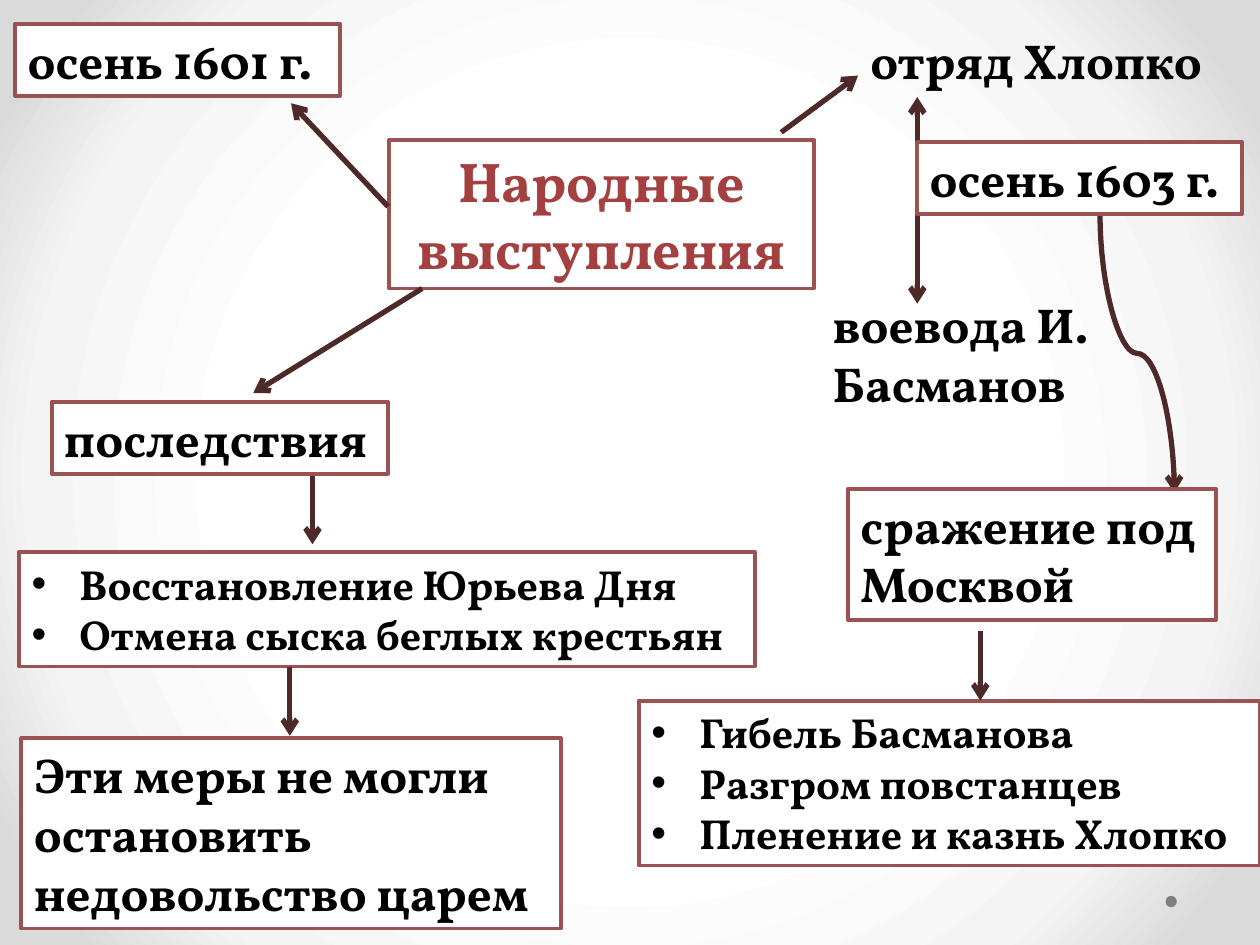
from pptx import Presentation
from pptx.dml.color import RGBColor
from pptx.enum.shapes import MSO_CONNECTOR, MSO_SHAPE
from pptx.enum.text import MSO_ANCHOR, MSO_AUTO_SIZE, PP_ALIGN
from pptx.oxml import parse_xml
from pptx.oxml.ns import nsdecls, qn
from pptx.util import Inches, Pt

STRAIGHT, CURVE = MSO_CONNECTOR.STRAIGHT, MSO_CONNECTOR.CURVE
RECTANGLE, OVAL = MSO_SHAPE.RECTANGLE, MSO_SHAPE.OVAL
TOP, LEFT, CENTER = MSO_ANCHOR.TOP, PP_ALIGN.LEFT, PP_ALIGN.CENTER
NO_AUTOSIZE = MSO_AUTO_SIZE.NONE

FONT = "Vollkorn"
BLACK, WHITE, RED = "000000", "FFFFFF", "A54040"
BORDER, ARROW, DOT = "9C5252", "4E2929", "808080"
BACKGROUND_STOPS = [(50, "FFFFFF"), (76, "F4F4F4"), (92, "DADADA")]
TWO_CONTENT_LAYOUT = 3
LIST_INDENT = Inches(0.38)


def rgb(hex_color):
    return RGBColor.from_string(hex_color)


def set_background(slide):
    """Radial gradient that spreads from the centre of the slide."""
    stops = "".join(
        f'<a:gs pos="{pos * 1000}"><a:srgbClr val="{color}"/></a:gs>'
        for pos, color in BACKGROUND_STOPS)
    background = parse_xml(
        f'<p:bg {nsdecls("p", "a")}><p:bgPr><a:gradFill rotWithShape="1">'
        f'<a:gsLst>{stops}</a:gsLst><a:path path="circle">'
        '<a:fillToRect l="50000" t="50000" r="50000" b="50000"/></a:path>'
        '</a:gradFill><a:effectLst/></p:bgPr></p:bg>')
    slide.shapes._spTree.addprevious(background)


def write_text(shape, text, size=28, color=BLACK, align=LEFT, bullets=False):
    """Each line of the text becomes one paragraph."""
    frame = shape.text_frame
    frame.text = text
    frame.word_wrap = True
    frame.auto_size = NO_AUTOSIZE
    frame.vertical_anchor = TOP
    for paragraph in frame.paragraphs:
        paragraph.alignment = align
        paragraph.space_before = Pt(0)
        font = paragraph.runs[0].font
        font.name, font.size, font.bold = FONT, Pt(size), True
        font.color.rgb = rgb(color)
        if bullets:
            properties = paragraph._p.get_or_add_pPr()
            properties.set("marL", str(LIST_INDENT))
            properties.set("indent", str(-LIST_INDENT))
            properties.append(parse_xml(
                f'<a:buFont {nsdecls("a")} typeface="Arial"/>'))
            properties.append(parse_xml(
                f'<a:buChar {nsdecls("a")} char="•"/>'))


def frame_shape(shape):
    shape.fill.solid()
    shape.fill.fore_color.rgb = rgb(WHITE)
    shape.line.color.rgb = rgb(BORDER)
    shape.line.width = Pt(2.25)


def fill_placeholder(placeholder, box, text, **text_format):
    placeholder.left, placeholder.top, placeholder.width, placeholder.height = (
        Inches(v) for v in box)
    frame_shape(placeholder)
    write_text(placeholder, text, **text_format)


def add_framed_box(slide, box, text):
    shape = slide.shapes.add_shape(RECTANGLE, *(Inches(v) for v in box))
    shape.shadow.inherit = False
    frame_shape(shape)
    write_text(shape, text)


def add_label(slide, box, text):
    write_text(slide.shapes.add_textbox(*(Inches(v) for v in box)), text)


def add_arrow(slide, start, end, kind=STRAIGHT, both_ends=False):
    arrow = slide.shapes.add_connector(
        kind, *(Inches(v) for v in (*start, *end)))
    arrow.line.color.rgb = rgb(ARROW)
    arrow.line.width = Pt(3)
    line = arrow.line._get_or_add_ln()
    for end_tag in (["headEnd"] if both_ends else []) + ["tailEnd"]:
        line.append(parse_xml(
            f'<a:{end_tag} {nsdecls("a")} type="arrow"/>'))
    arrow._element.spPr.append(parse_xml(f'<a:effectLst {nsdecls("a")}/>'))
    return arrow


def add_falling_curve(slide, start, end):
    """Curve that leaves and arrives vertically: a sideways one, turned."""
    (x1, y1), (x2, y2) = start, end
    center_x, center_y = (x1 + x2) / 2, (y1 + y2) / 2
    half_length, half_shift = (y2 - y1) / 2, (x2 - x1) / 2
    curve = add_arrow(slide,
                      (center_x + half_length, center_y - half_shift),
                      (center_x - half_length, center_y + half_shift), CURVE)
    curve._element.spPr.find(qn("a:xfrm")).set("rot", str(270 * 60000))


def add_dot(slide, box):
    dot = slide.shapes.add_shape(OVAL, *(Inches(v) for v in box))
    dot.shadow.inherit = False
    dot.fill.solid()
    dot.fill.fore_color.rgb = rgb(DOT)
    dot.line.fill.background()


def main():
    presentation = Presentation()
    presentation.slide_width, presentation.slide_height = Inches(10), Inches(7.5)
    slide = presentation.slides.add_slide(
        presentation.slide_layouts[TWO_CONTENT_LAYOUT])
    set_background(slide)
    add_dot(slide, (9.25, 7.11, 0.09, 0.09))

    # Title and the two lists
    title, reforms, outcome = slide.placeholders
    fill_placeholder(title, (3.09, 1.11, 3.37, 1.18), "Народные выступления",
                     size=32, color=RED, align=CENTER)
    fill_placeholder(reforms, (0.15, 4.38, 5.84, 0.91),
                     "Восстановление Юрьева Дня\nОтмена сыска беглых крестьян",
                     size=24, bullets=True)
    fill_placeholder(outcome, (5.07, 5.56, 4.93, 1.31),
                     "Гибель Басманова\nРазгром повстанцев\n"
                     "Пленение и казнь Хлопко", size=24, bullets=True)

    # Arrows, below the boxes they touch
    for start, end in [((3.08, 1.64), (2.31, 0.82)),
                       ((6.2, 1.05), (6.81, 0.6)),
                       ((3.35, 2.29), (2.01, 3.12))]:
        add_arrow(slide, start, end)
    for x, y in [(2.48, 3.77), (2.3, 5.29), (7.78, 5.01)]:
        add_arrow(slide, (x, y), (x, y + 0.55))
    add_arrow(slide, (7.28, 0.77), (7.28, 2.41), both_ends=True)
    add_falling_curve(slide, (8.73, 1.7), (9.32, 3.91))

    # Events and people
    for box, text in [
            ((0.12, 0.19, 2.58, 0.57), "осень 1601 г."),
            ((7.28, 1.13, 2.58, 0.57), "осень 1603 г."),
            ((0.41, 3.19, 2.67, 0.57), "последствия"),
            ((6.73, 3.88, 2.92, 1.04), "сражение под Москвой"),
            ((0.17, 5.86, 4.28, 1.51),
             "Эти меры не могли остановить недовольство царем")]:
        add_framed_box(slide, box, text)
    add_label(slide, (6.81, 0.19, 2.94, 0.57), "отряд Хлопко")
    add_label(slide, (6.51, 2.29, 2.54, 1.04), "воевода И. Басманов")

    presentation.save("out.pptx")


if __name__ == "__main__":
    main()
